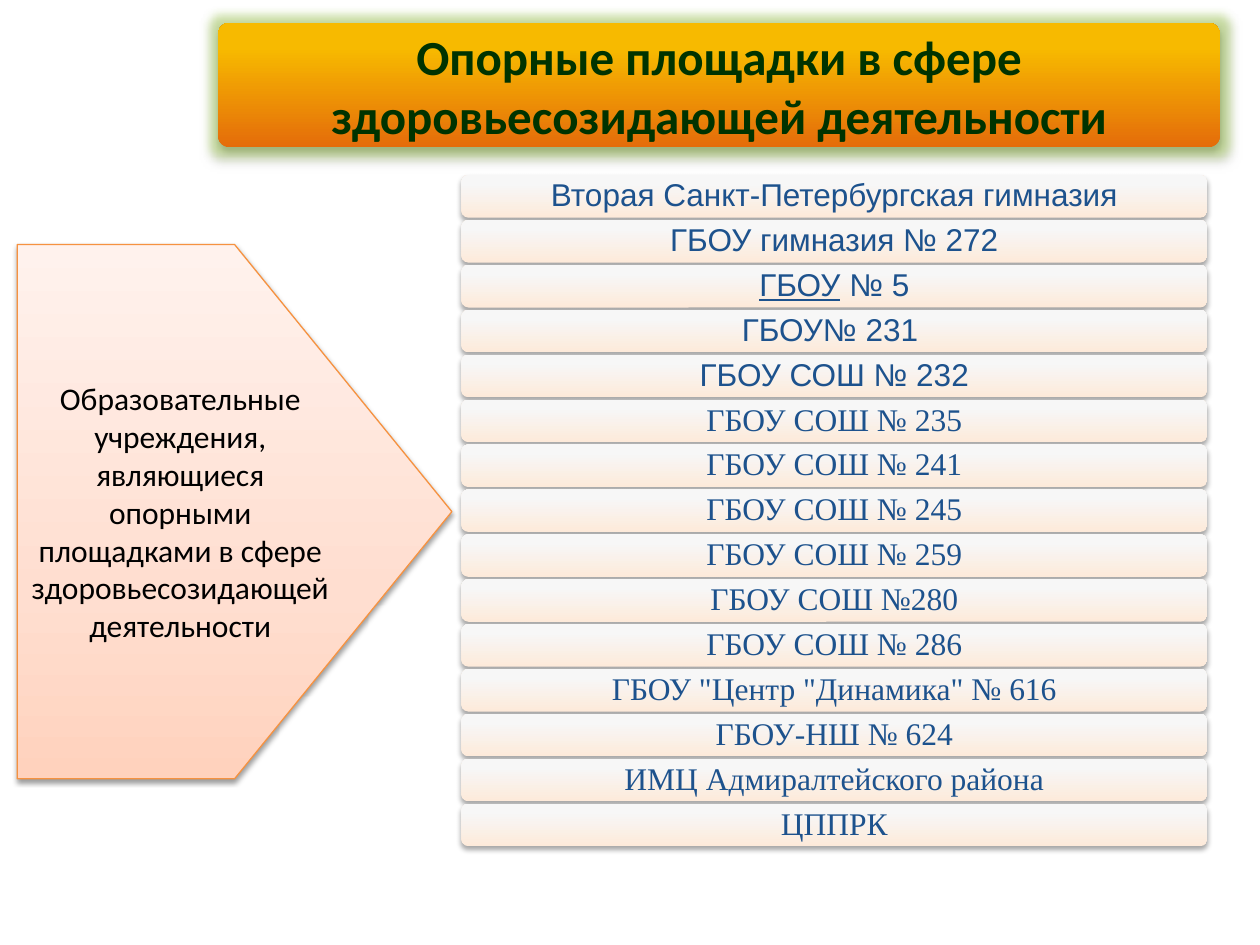
from lxml.etree import SubElement
from pptx import Presentation
from pptx.dml.color import RGBColor
from pptx.enum.shapes import MSO_SHAPE
from pptx.enum.text import MSO_ANCHOR, PP_ALIGN
from pptx.oxml.ns import qn
from pptx.util import Cm, Pt

COLORS = {
    "title": "003300", "body": "000000", "school": "1D528D",
    "edge": "F69240", "shadow": "000000", "glow": "9BCB40",
}
# Gradient stops run from the bottom edge to the top edge
GRADIENTS = {
    "title": [(0, "E46C0A"), (80, "F7BA00"), (100, "F8BB00")],
    "arrow": [(0, "FFD2BD"), (35, "FFDED0"), (100, "FFF2ED")],
    "school": [(0, "FDEADA"), (80, "F7F7F7"), (100, "F8F8F8")],
}
SANS, SERIF = "Arial", "Times New Roman"
# Each school: font and runs of (text, underlined)
SCHOOLS = [
    (SANS, [("Вторая Санкт-Петербургская гимназия", False)]),
    (SANS, [("ГБОУ гимназия № 272", False)]),
    (SANS, [("ГБОУ", True), (" № 5", False)]),
    (SANS, [("ГБОУ№ 231 ", False)]),
    (SANS, [("ГБОУ СОШ № 232", False)]),
    (SERIF, [("ГБОУ СОШ № 235", False)]),
    (SERIF, [("ГБОУ СОШ № 241", False)]),
    (SERIF, [("ГБОУ СОШ № 245", False)]),
    (SERIF, [("ГБОУ СОШ № 259", False)]),
    (SERIF, [("ГБОУ СОШ №280", False)]),
    (SERIF, [("ГБОУ СОШ № 286", False)]),
    (SERIF, [('ГБОУ "Центр "Динамика" № 616', False)]),
    (SERIF, [("ГБОУ-НШ № 624", False)]),
    (SERIF, [("ИМЦ Адмиралтейского района", False)]),
    (SERIF, [("ЦППРК", False)]),
]
LIST_LEFT, LIST_TOP, ROW_WIDTH = 9.3, 3.53, 15.04
ROW_HEIGHT, ROW_PITCH = 0.86, 0.905


def add_color(parent, color, opacity=100):
    node = SubElement(parent, qn("a:srgbClr"), val=color)
    if opacity < 100:
        SubElement(node, qn("a:alpha"), val=str(opacity * 1000))


def set_gradient(shape, stops):
    shape.fill.gradient()
    gradient = shape.element.spPr.find(qn("a:gradFill"))
    stop_list = gradient.find(qn("a:gsLst"))
    for old_stop in list(stop_list):
        stop_list.remove(old_stop)
    for position, color in stops:
        stop = SubElement(stop_list, qn("a:gs"), pos=str(position * 1000))
        add_color(stop, color)
    gradient.find(qn("a:lin")).set("ang", "16200000")


def set_effects(shape, opacity, distance, glow_radius=0):
    shape.shadow.inherit = False
    effects = shape.element.spPr.find(qn("a:effectLst"))
    if glow_radius:
        glow = SubElement(effects, qn("a:glow"), rad=str(Pt(glow_radius)))
        add_color(glow, COLORS["glow"], 40)
    shadow = SubElement(effects, qn("a:outerShdw"), blurRad=str(Pt(3.1)),
                        dist=str(Pt(distance)), dir="5400000", rotWithShape="0")
    add_color(shadow, COLORS["shadow"], opacity)


def add_panel(slide, preset, box, gradient):
    panel = slide.shapes.add_shape(preset, *(Cm(length) for length in box))
    set_gradient(panel, GRADIENTS[gradient])
    panel.line.fill.background()
    return panel


def write_text(shape, runs, font, size, color, bold=False):
    frame = shape.text_frame
    frame.word_wrap = True
    frame.vertical_anchor = MSO_ANCHOR.MIDDLE
    paragraph = frame.paragraphs[0]
    paragraph.alignment = PP_ALIGN.CENTER
    for text, underlined in runs:
        run = paragraph.add_run()
        run.text = text
        run.font.name = font
        run.font.size = Pt(size)
        run.font.bold = bold
        run.font.underline = underlined
        run.font.color.rgb = RGBColor.from_string(COLORS[color])
    return frame


def add_title(slide):
    title = add_panel(slide, MSO_SHAPE.ROUNDED_RECTANGLE, (4.4, 0.46, 20.19, 2.51), "title")
    title.adjustments[0] = 0.09
    set_effects(title, opacity=35, distance=1.8, glow_radius=11)
    write_text(title, [("Опорные площадки в сфере здоровьесозидающей деятельности", False)],
               "Calibri", 28, "title", bold=True)


def add_arrow(slide):
    arrow = add_panel(slide, MSO_SHAPE.PENTAGON, (0.35, 4.93, 8.76, 10.77), "arrow")
    arrow.line.color.rgb = RGBColor.from_string(COLORS["edge"])
    arrow.line.width = Pt(0.75)
    set_effects(arrow, opacity=38, distance=1.6)
    write_text(arrow, [("Образовательные учреждения, являющиеся опорными площадками "
                        "в сфере здоровьесозидающей деятельности", False)],
               "Calibri", 18, "body")


def add_school(slide, index, font, runs):
    top = LIST_TOP + index * ROW_PITCH
    row = add_panel(slide, MSO_SHAPE.ROUNDED_RECTANGLE,
                    (LIST_LEFT, top, ROW_WIDTH, ROW_HEIGHT), "school")
    set_effects(row, opacity=35, distance=1.8)
    frame = write_text(row, runs, font, 18, "school")
    frame.margin_left = frame.margin_right = Cm(0.18)
    frame.margin_top = frame.margin_bottom = Cm(0.18)
    frame.paragraphs[0].line_spacing = 0.9


def main():
    presentation = Presentation()
    presentation.slide_width, presentation.slide_height = Cm(25.4), Cm(19.05)
    slide = presentation.slides.add_slide(presentation.slide_layouts[6])

    # Heading and the arrow pointing at the list
    add_title(slide)
    add_arrow(slide)

    # List of schools, evenly spaced
    for index, (font, runs) in enumerate(SCHOOLS):
        add_school(slide, index, font, runs)

    presentation.save("out.pptx")


if __name__ == "__main__":
    main()
